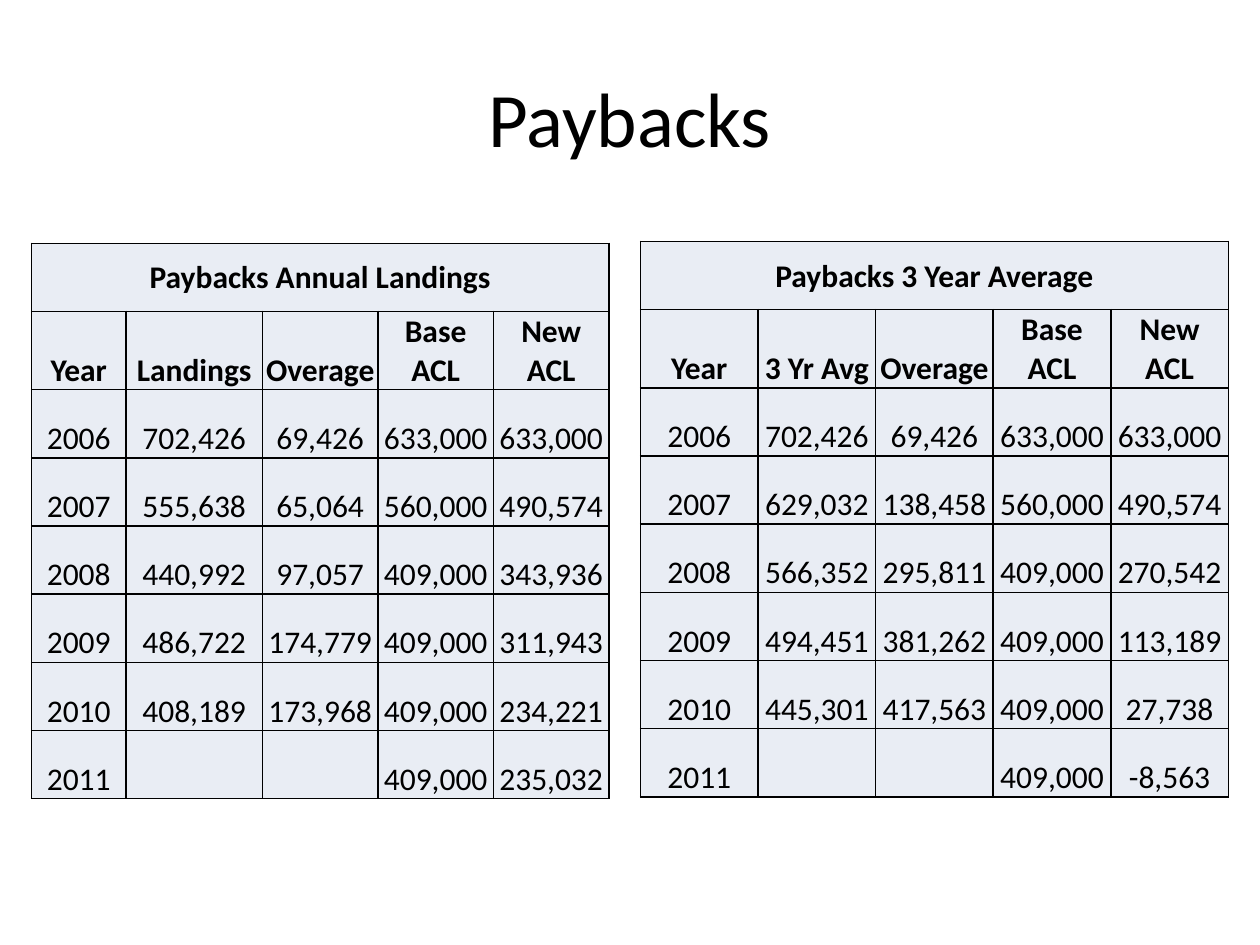
from lxml import etree
from pptx import Presentation
from pptx import util as u
from pptx.dml.color import RGBColor
from pptx.enum import text
from pptx.oxml import ns

BLACK = RGBColor(0x00, 0x00, 0x00)
PALE_BLUE = RGBColor(0xE9, 0xED, 0xF4)

HEADER_ROW, ROW = 44.7, 38.95
YEARS = range(2006, 2012)
BASE_ACL = ["633,000", "560,000"] + ["409,000"] * 4

# Landings, overage and new ACL for each year
ANNUAL = [
    ("702,426", "69,426", "633,000"),
    ("555,638", "65,064", "490,574"),
    ("440,992", "97,057", "343,936"),
    ("486,722", "174,779", "311,943"),
    ("408,189", "173,968", "234,221"),
    ("", "", "235,032"),
]
AVERAGE = [
    ("702,426", "69,426", "633,000"),
    ("629,032", "138,458", "490,574"),
    ("566,352", "295,811", "270,542"),
    ("494,451", "381,262", "113,189"),
    ("445,301", "417,563", "27,738"),
    ("", "", "-8,563"),
]


class SlideBuilder:
    font = "Calibri"

    def __init__(self, slide):
        self.s = slide

    def add_text(self, tf, words, size, bold=False):
        p = tf.paragraphs[0]
        p.alignment = text.PP_ALIGN.CENTER
        r = p.add_run()
        r.text = words
        r.font.name, r.font.size, r.font.bold = self.font, u.Pt(size), bold
        r.font.color.rgb = BLACK

    def title(self, words, left, top, width, height):
        sp = self.s.shapes.title
        sp.left, sp.top = u.Pt(left), u.Pt(top)
        sp.width, sp.height = u.Pt(width), u.Pt(height)
        sp.text_frame.vertical_anchor = text.MSO_ANCHOR.MIDDLE
        self.add_text(sp.text_frame, words, 44)

    def borders(self, cell):
        tc_pr = cell._tc.get_or_add_tcPr()
        for side in ("lnL", "lnR", "lnT", "lnB"):
            ln = etree.SubElement(tc_pr, ns.qn(f"a:{side}"), w=str(u.Pt(1)))
            fill = etree.SubElement(ln, ns.qn("a:solidFill"))
            etree.SubElement(fill, ns.qn("a:srgbClr"), val=str(BLACK))

    def cell(self, cell, words, bold, anchor):
        cell.margin_left = cell.margin_top = cell.margin_right = u.Pt(0.75)
        cell.margin_bottom = 0
        cell.vertical_anchor = anchor
        # Borders come before the fill in the cell properties
        self.borders(cell)
        cell.fill.solid()
        cell.fill.fore_color.rgb = PALE_BLUE
        if words:
            self.add_text(cell.text_frame, words, 18, bold)

    def payback_table(self, heading, measure, records, left, top, widths):
        rows = [[heading, "", "", "", ""],
                ["Year", measure, "Overage", "Base ACL", "New ACL"]]
        for year, base, (amount, overage, new) in zip(YEARS, BASE_ACL, records):
            rows.append([str(year), amount, overage, base, new])
        heights = [ROW, HEADER_ROW] + [ROW] * len(records)

        table = self.s.shapes.add_table(
            len(rows), len(widths), u.Pt(left), u.Pt(top),
            u.Pt(sum(widths)), u.Pt(sum(heights))).table
        for column, width in zip(table.columns, widths):
            column.width = u.Pt(width)
        for row, height in zip(table.rows, heights):
            row.height = u.Pt(height)

        for i, row in enumerate(rows):
            anchor = text.MSO_ANCHOR.BOTTOM if i else text.MSO_ANCHOR.MIDDLE
            for j, words in enumerate(row):
                self.cell(table.cell(i, j), words, i < 2, anchor)
        table.cell(0, 0).merge(table.cell(0, len(widths) - 1))


def main():
    prs = Presentation()
    prs.slide_width, prs.slide_height = u.Pt(720), u.Pt(540)
    builder = SlideBuilder(prs.slides.add_slide(prs.slide_layouts[5]))

    # Title
    builder.title("Paybacks", 36, 21.6, 648, 90)

    # Three-year average on the right, annual landings on the left
    builder.payback_table("Paybacks 3 Year Average", "3 Yr Avg", AVERAGE,
                          366, 138, [67.2] * 5)
    builder.payback_table("Paybacks Annual Landings", "Landings", ANNUAL,
                          18, 139, [54, 78, 66, 66, 66])

    prs.save("out.pptx")


if __name__ == "__main__":
    main()
